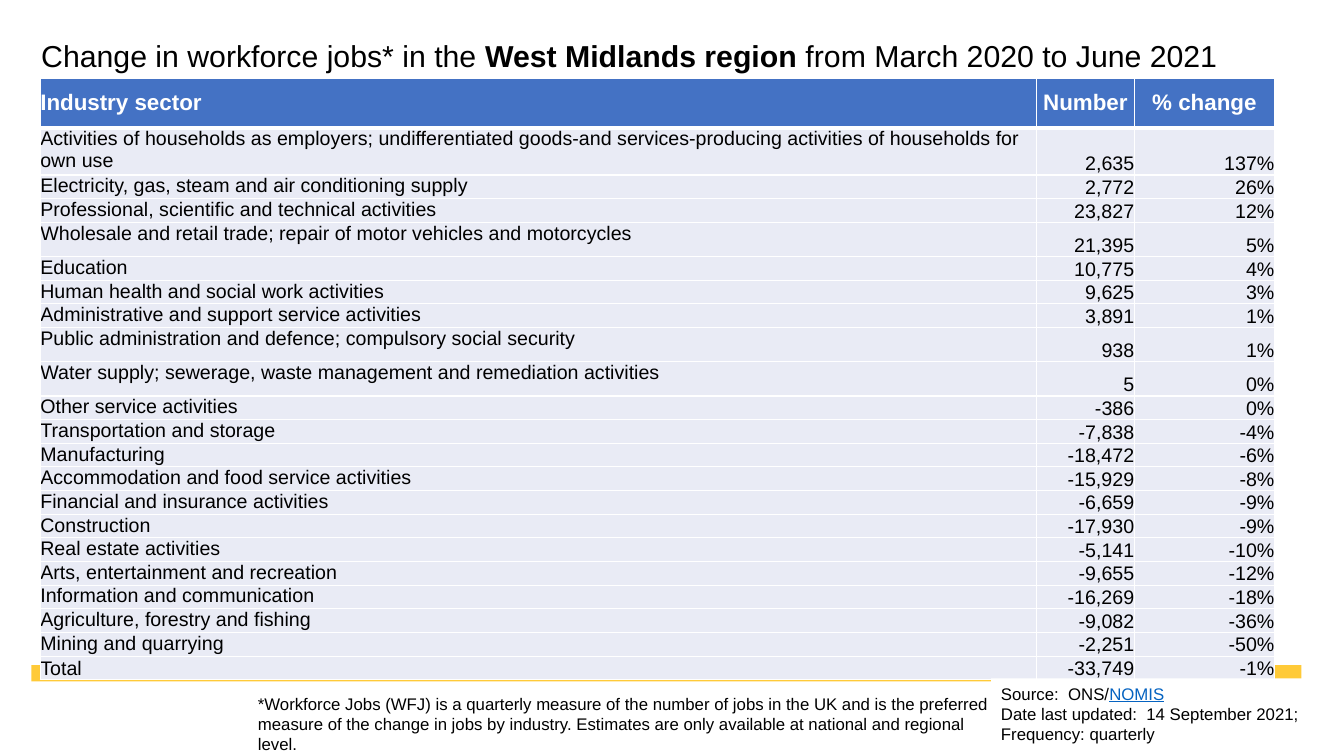
"""Build a slide tabulating workforce job changes by industry in the West Midlands."""
from lxml.etree import SubElement
from pptx import Presentation
from pptx.dml.color import RGBColor
from pptx.enum.shapes import MSO_SHAPE as Preset
from pptx.enum.text import MSO_ANCHOR as Anchor, PP_ALIGN as Align
from pptx.oxml.ns import qn
from pptx.util import Inches, Pt

SLIDE_WIDTH, SLIDE_HEIGHT = Inches(13.33), Inches(7.5)
FONT = "Arial"
COLORS = {
    "text": "000000",
    "white": "FFFFFF",
    "header": "4472C4",
    "body": "E9EBF5",
    "bar": "FFCA38",
    "link": "0563C1",
}
HEADINGS = ("Industry sector", "Number", "% change")
SECTORS = [
    ("Activities of households as employers; undifferentiated goods-and "
     "services-producing activities of households for own use", "2,635", "137%"),
    ("Electricity, gas, steam and air conditioning supply", "2,772", "26%"),
    ("Professional, scientific and technical activities", "23,827", "12%"),
    ("Wholesale and retail trade; repair of motor vehicles and motorcycles", "21,395", "5%"),
    ("Education", "10,775", "4%"),
    ("Human health and social work activities", "9,625", "3%"),
    ("Administrative and support service activities", "3,891", "1%"),
    ("Public administration and defence; compulsory social security", "938", "1%"),
    ("Water supply; sewerage, waste management and remediation activities", "5", "0%"),
    ("Other service activities", "-386", "0%"),
    ("Transportation and storage", "-7,838", "-4%"),
    ("Manufacturing", "-18,472", "-6%"),
    ("Accommodation and food service activities", "-15,929", "-8%"),
    ("Financial and insurance activities", "-6,659", "-9%"),
    ("Construction", "-17,930", "-9%"),
    ("Real estate activities", "-5,141", "-10%"),
    ("Arts, entertainment and recreation", "-9,655", "-12%"),
    ("Information and communication", "-16,269", "-18%"),
    ("Agriculture, forestry and fishing", "-9,082", "-36%"),
    ("Mining and quarrying", "-2,251", "-50%"),
    ("Total", "-33,749", "-1%"),
]
COLUMN_SHARES = (74.12, 7.28, 10.43)
ROW_SHARE = 3.13
TALL_ROW_SHARES = {0: 6.53, 1: 5.47, 4: 4.53, 8: 4.53, 9: 4.53}


def across(percent):
    return int(SLIDE_WIDTH * percent / 100)


def down(percent):
    return int(SLIDE_HEIGHT * percent / 100)


def place(left, top, width, height):
    return across(left), down(top), across(width), down(height)


def color(name):
    return RGBColor.from_string(COLORS[name])


def add_run(paragraph, text, size, name="text", bold=False, underline=False):
    run = paragraph.add_run()
    run.text = text
    font = run.font
    font.name, font.size = FONT, Pt(size)
    font.bold, font.underline = bold, underline
    font.color.rgb = color(name)


def add_text(slide, box, anchor=Anchor.TOP):
    frame = slide.shapes.add_textbox(*place(*box)).text_frame
    frame.word_wrap = True
    frame.vertical_anchor = anchor
    return frame


def add_block(slide, box, fill):
    shape = slide.shapes.add_shape(Preset.RECTANGLE, *place(*box))
    shape.shadow.inherit = False
    shape.fill.solid()
    shape.fill.fore_color.rgb = color(fill)
    shape.line.fill.background()
    return shape


def set_borders(cell, top, bottom):
    properties = cell._tc.get_or_add_tcPr()
    for side, width in (("L", 1), ("R", 1), ("T", top), ("B", bottom)):
        line = SubElement(properties, qn(f"a:ln{side}"), w=str(Pt(width)))
        fill = SubElement(line, qn("a:solidFill"))
        SubElement(fill, qn("a:srgbClr"), val=COLORS["white"])


def style_cell(cell, text, fill, size, name, bold, align, anchor):
    cell.margin_left = cell.margin_right = cell.margin_top = cell.margin_bottom = 0
    cell.vertical_anchor = anchor
    cell.fill.solid()
    cell.fill.fore_color.rgb = color(fill)
    paragraph = cell.text_frame.paragraphs[0]
    paragraph.alignment = align
    add_run(paragraph, text, size, name, bold)


def add_jobs_table(slide):
    rows = [HEADINGS, *SECTORS]
    heights = [TALL_ROW_SHARES.get(index, ROW_SHARE) for index in range(len(rows))]
    box = (3, 10.4, sum(COLUMN_SHARES), sum(heights))
    table = slide.shapes.add_table(len(rows), len(HEADINGS), *place(*box)).table
    table.horz_banding = False
    for column, share in zip(table.columns, COLUMN_SHARES):
        column.width = across(share)
    for row_index, values in enumerate(rows):
        table.rows[row_index].height = down(heights[row_index])
        is_header, is_total = row_index == 0, row_index == len(rows) - 1
        for column_index, value in enumerate(values):
            cell = table.cell(row_index, column_index)
            is_figure = column_index > 0
            set_borders(cell, 3 if row_index == 1 else 1, 3 if is_header else 1)
            if is_header:
                align = Align.CENTER if is_figure else Align.LEFT
                style_cell(cell, value, "header", 16, "white", True, align, Anchor.MIDDLE)
            else:
                align = Align.RIGHT if is_figure else Align.LEFT
                anchor = Anchor.BOTTOM if is_figure or is_total else Anchor.TOP
                style_cell(cell, value, "body", 14, "text", False, align, anchor)


def add_title(slide):
    paragraph = add_text(slide, (2.33, 5.33, 94.5, 4.53), Anchor.MIDDLE).paragraphs[0]
    paragraph.line_spacing = 0.9
    add_run(paragraph, "Change in workforce jobs* in the ", 21.6)
    add_run(paragraph, "West Midlands region ", 21.6, bold=True)
    add_run(paragraph, "from March 2020 to June 2021", 21.6)


def add_footnote(slide):
    frame = add_text(slide, (18.45, 91.07, 56.19, 9.47))
    add_run(frame.paragraphs[0],
            "*Workforce Jobs (WFJ) is a quarterly measure of the number of jobs in the UK "
            "and is the preferred measure of the change in jobs by industry. Estimates are "
            "only available at national and regional level.", 12)


def add_source(slide):
    frame = add_block(slide, (73.74, 89.73, 26.26, 9.47), "white").text_frame
    frame.word_wrap = True
    frame.vertical_anchor = Anchor.TOP
    source, updated = frame.paragraphs[0], frame.add_paragraph()
    source.alignment = updated.alignment = Align.LEFT
    add_run(source, "Source:  ONS/", 12)
    add_run(source, "NOMIS", 12, "link", underline=True)
    add_run(updated, "Date last updated:  14 September 2021; Frequency: quarterly", 12)


def main():
    presentation = Presentation()
    presentation.slide_width, presentation.slide_height = SLIDE_WIDTH, SLIDE_HEIGHT
    slide = presentation.slides.add_slide(presentation.slide_layouts[6])
    add_block(slide, (2.33, 88, 94.5, 2.13), "bar")
    add_title(slide)
    add_jobs_table(slide)
    add_footnote(slide)
    add_source(slide)
    presentation.save("out.pptx")


if __name__ == "__main__":
    main()
